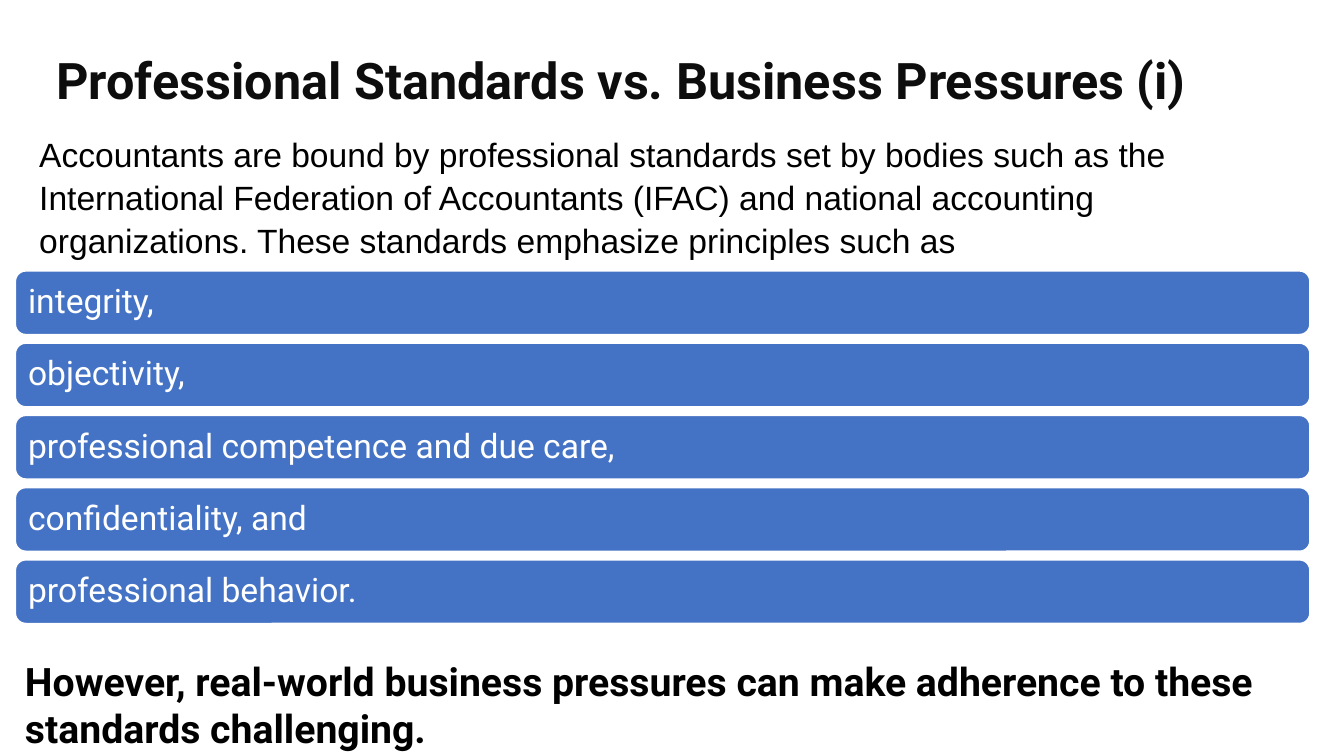
from pptx import Presentation
from pptx.dml.color import RGBColor
from pptx.enum import shapes, text
from pptx.util import Cm, Pt

COLOURS = {"title": "0D0D0D", "body": "000000", "bar": "4472C4", "white": "FFFFFF"}
PRINCIPLES = [
    "integrity,",
    "objectivity,",
    "professional competence and due care,",
    "confidentiality, and",
    "professional behavior.",
]
BARS_TOP, BAR_PITCH = 6.82, 1.82


def colour(key):
    """Return the named colour."""
    return RGBColor.from_string(COLOURS[key])


def write(frame, words, size, font, shade, bold=False, spacing=1.0, anchor=text.MSO_ANCHOR.TOP):
    """Fill a text frame with one left-aligned paragraph."""
    frame.word_wrap = True
    frame.vertical_anchor = anchor
    paragraph = frame.paragraphs[0]
    paragraph.text = words
    paragraph.alignment = text.PP_ALIGN.LEFT
    paragraph.line_spacing = spacing
    face = paragraph.runs[0].font
    face.name, face.size, face.bold = font, Pt(size), bold
    face.color.rgb = colour(shade)


def add_words(slide, left, top, width, height, words, size, font, shade, **style):
    """Add a text box holding one paragraph."""
    box = slide.shapes.add_textbox(Cm(left), Cm(top), Cm(width), Cm(height))
    write(box.text_frame, words, size, font, shade, **style)


def add_principle(slide, top, words):
    """Add a rounded bar naming one principle."""
    bar = slide.shapes.add_shape(
        shapes.MSO_SHAPE.ROUNDED_RECTANGLE, Cm(0.38), Cm(top), Cm(32.64), Cm(1.62))
    bar.shadow.inherit = False
    bar.fill.solid()
    bar.fill.fore_color.rgb = colour("bar")
    bar.line.color.rgb = colour("white")
    bar.line.width = Pt(1.5)
    write(bar.text_frame, words, 24, "Roboto", "white",
          spacing=0.9, anchor=text.MSO_ANCHOR.MIDDLE)


def main():
    """Build and save the slide."""
    deck = Presentation()
    deck.slide_width, deck.slide_height = Cm(33.87), Cm(19.05)
    slide = deck.slides.add_slide(deck.slide_layouts[6])
    add_words(slide, 1.17, 1.02, 31.55, 2.16,
              "Professional Standards vs. Business Pressures (i)", 36, "Roboto", "title",
              bold=True, spacing=0.9, anchor=text.MSO_ANCHOR.MIDDLE)
    for row, principle in enumerate(PRINCIPLES):
        add_principle(slide, BARS_TOP + row * BAR_PITCH, principle)
    add_words(slide, 0.74, 3.18, 31.98, 3.48,
              "Accountants are bound by professional standards set by bodies such as the "
              "International Federation of Accountants (IFAC) and national accounting "
              "organizations. These standards emphasize principles such as",
              24, "Arial", "body", spacing=1.07)
    add_words(slide, 0.38, 16.43, 33.48, 2.64,
              "However, real-world business pressures can make adherence to these "
              "standards challenging.", 28, "Roboto", "body", bold=True)
    deck.save("out.pptx")


if __name__ == "__main__":
    main()
